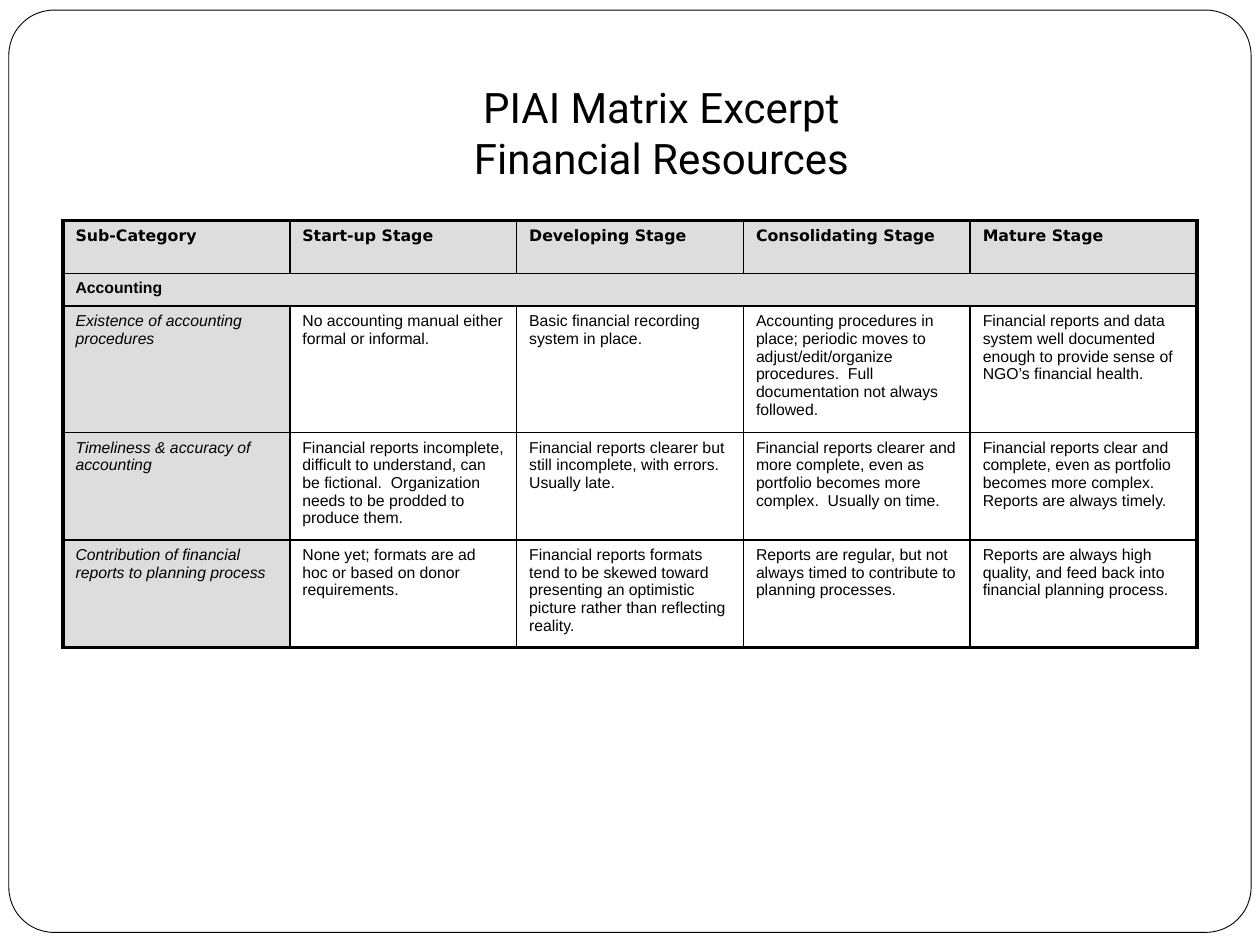
from dataclasses import dataclass

from lxml import etree
from pptx import Presentation
from pptx.dml.color import RGBColor
from pptx.enum.shapes import MSO_SHAPE
from pptx.enum.text import MSO_ANCHOR, PP_ALIGN
from pptx.oxml.ns import qn
from pptx.util import Inches, Pt

ROUNDED = MSO_SHAPE.ROUNDED_RECTANGLE
BOTTOM = MSO_ANCHOR.BOTTOM
CENTER = PP_ALIGN.CENTER
BLANK_LAYOUT = 6


@dataclass(frozen=True)
class Theme:
    ink: str = "000000"
    paper: str = "FFFFFF"
    shade: str = "DDDDDD"
    title_font: str = "Roboto"
    header_font: str = "DejaVu Sans"
    body_font: str = "Arial"
    title_size: float = 24
    table_size: float = 9
    frame_line: float = 0.5
    inner_line: float = 1
    outer_line: float = 2.25


@dataclass(frozen=True)
class CellLook:
    font: str
    bold: bool = False
    italic: bool = False
    shaded: bool = False


THEME = Theme()
HEADER = CellLook(THEME.header_font, bold=True, shaded=True)
SECTION = CellLook(THEME.body_font, bold=True, shaded=True)
CRITERION = CellLook(THEME.body_font, italic=True, shaded=True)
STAGE = CellLook(THEME.body_font)

STAGES = ["Sub-Category", "Start-up Stage", "Developing Stage",
          "Consolidating Stage", "Mature Stage"]
CRITERIA = [
    ["Existence of accounting procedures",
     "No accounting manual either formal or informal.",
     "Basic financial recording system in place.",
     "Accounting procedures in place; periodic moves to adjust/edit/organize "
     "procedures.  Full documentation not always followed.",
     "Financial reports and data system well documented enough to provide "
     "sense of NGO’s financial health."],
    ["Timeliness & accuracy of accounting",
     "Financial reports incomplete, difficult to understand, can be "
     "fictional.  Organization needs to be prodded to produce them.",
     "Financial reports clearer but still incomplete, with errors.  "
     "Usually late.",
     "Financial reports clearer and more complete, even as portfolio becomes "
     "more complex.  Usually on time.",
     "Financial reports clear and complete, even as portfolio becomes more "
     "complex.  Reports are always timely."],
    ["Contribution of financial reports to planning process",
     "None yet; formats are ad hoc or based on donor requirements.",
     "Financial reports formats tend to be skewed toward presenting an "
     "optimistic picture rather than reflecting reality.",
     "Reports are regular, but not always timed to contribute to planning "
     "processes.",
     "Reports are always high quality, and feed back into financial planning "
     "process."],
]
ROW_HEIGHTS = [0.42, 0.26, 0.83, 0.82, 0.82]
COLUMN_WIDTH = 1.8


def write_text(paragraph, text: str, formats: dict) -> None:
    paragraph.text = text
    for span in paragraph.runs:
        for name, value in formats.items():
            setattr(span.font, name, value)
        span.font.color.rgb = RGBColor.from_string(THEME.ink)


def add_frame(slide) -> None:
    frame = slide.shapes.add_shape(
        ROUNDED, Inches(0.07), Inches(0.08), Inches(9.86), Inches(7.32))
    frame.adjustments[0] = 0.049
    frame.shadow.inherit = False
    frame.fill.solid()
    frame.fill.fore_color.rgb = RGBColor.from_string(THEME.paper)
    frame.line.color.rgb = RGBColor.from_string(THEME.ink)
    frame.line.width = Pt(THEME.frame_line)


def add_title(slide, text: str) -> None:
    box = slide.shapes.add_textbox(
        Inches(1), Inches(0.3), Inches(8.5), Inches(1.25))
    text_frame = box.text_frame
    layout = {"word_wrap": True, "vertical_anchor": BOTTOM,
              "margin_bottom": Inches(0.1)}
    for name, value in layout.items():
        setattr(text_frame, name, value)
    para = text_frame.paragraphs[0]
    para.alignment = CENTER
    write_text(para, text, {"name": THEME.title_font,
                            "size": Pt(THEME.title_size)})


def set_borders(cell, widths: dict[str, float]) -> None:
    properties = cell._tc.get_or_add_tcPr()
    for side, width in widths.items():
        line = etree.SubElement(properties, qn(f"a:ln{side}"), w=str(Pt(width)))
        fill = etree.SubElement(line, qn("a:solidFill"))
        etree.SubElement(fill, qn("a:srgbClr"), val=THEME.ink)


def border_widths(row: int, column: int, rows: int, columns: int,
                  merged: bool) -> dict[str, float]:
    """Heavy lines on the table's outline, thin ones inside it."""
    outer = {"L": column == 0, "R": column == columns - 1,
             "T": row == 0, "B": row == rows - 1}
    if merged:
        outer["L"] = outer["R"] = True
    return {side: THEME.outer_line if edge else THEME.inner_line
            for side, edge in outer.items()}


def fill_cell(cell, text: str, look: CellLook) -> None:
    if look.shaded:
        cell.fill.solid()
        cell.fill.fore_color.rgb = RGBColor.from_string(THEME.shade)
    else:
        cell.fill.background()
    write_text(cell.text_frame.paragraphs[0], text,
               {"name": look.font, "size": Pt(THEME.table_size),
                "bold": look.bold, "italic": look.italic})


def add_matrix(slide) -> None:
    rows, columns = len(ROW_HEIGHTS), len(STAGES)
    table = slide.shapes.add_table(
        rows, columns, Inches(0.5), Inches(1.75),
        Inches(COLUMN_WIDTH * columns), Inches(sum(ROW_HEIGHTS))).table
    table.first_row = table.horz_banding = False
    for column in table.columns:
        column.width = Inches(COLUMN_WIDTH)
    for row, height in zip(table.rows, ROW_HEIGHTS):
        row.height = Inches(height)
    table.cell(1, 0).merge(table.cell(1, columns - 1))

    body_looks = [CRITERION] + [STAGE] * (columns - 1)
    content = [list(zip(STAGES, [HEADER] * columns)), [("Accounting", SECTION)]]
    content += [list(zip(texts, body_looks)) for texts in CRITERIA]
    for row, entries in enumerate(content):
        for column, (text, look) in enumerate(entries):
            cell = table.cell(row, column)
            set_borders(cell, border_widths(
                row, column, rows, columns, cell.is_merge_origin))
            fill_cell(cell, text, look)


def main() -> None:
    deck = Presentation()
    deck.slide_width, deck.slide_height = Inches(10), Inches(7.5)
    page = deck.slides.add_slide(deck.slide_layouts[BLANK_LAYOUT])
    add_frame(page)
    add_title(page, "PIAI Matrix Excerpt\vFinancial Resources")
    add_matrix(page)
    deck.save("out.pptx")


if __name__ == "__main__":
    main()
